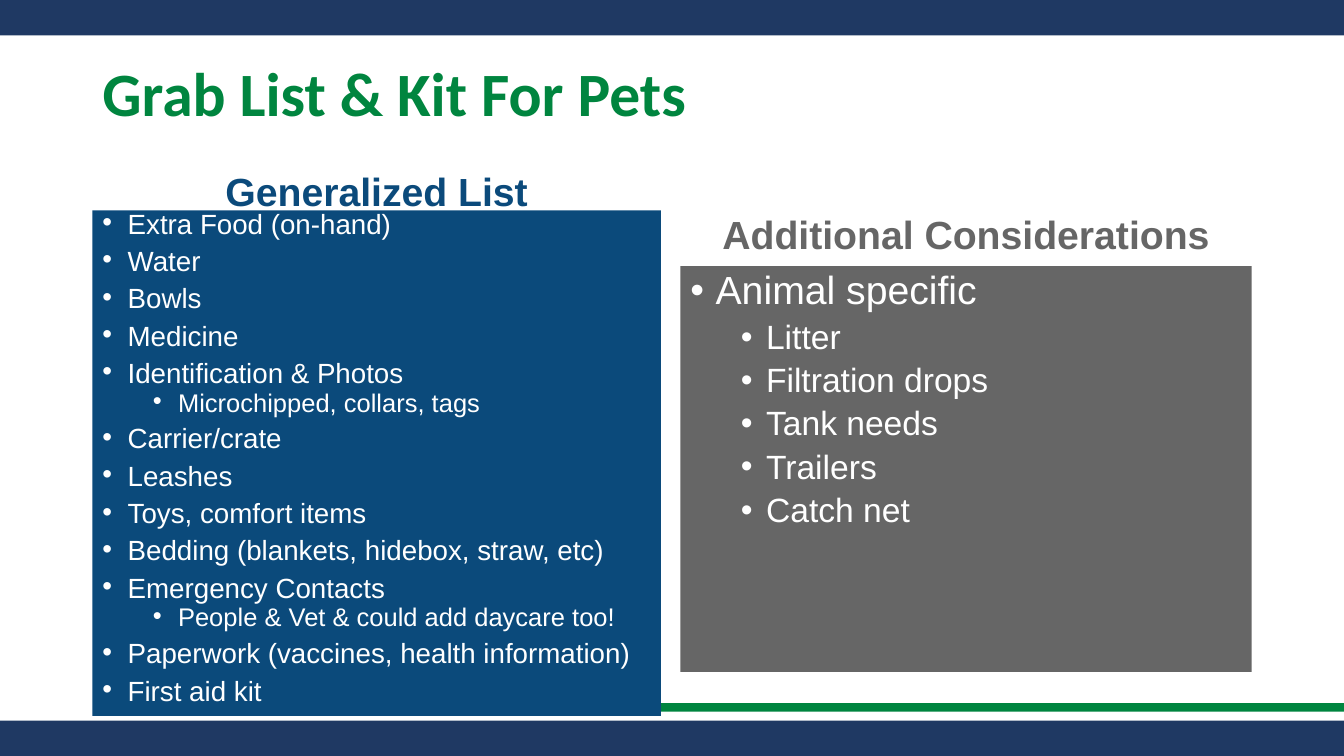
from dataclasses import dataclass

from pptx import Presentation
from pptx.dml.color import RGBColor as RGB
from pptx.enum.shapes import MSO_SHAPE as SHAPE
from pptx.enum.text import MSO_ANCHOR as ANCHOR, MSO_AUTO_SIZE as AUTO, PP_ALIGN as ALIGN
from pptx.oxml import parse_xml
from pptx.oxml.ns import nsdecls
from pptx.util import Pt


@dataclass(frozen=True)
class Theme:
    navy: str = "1F3963"
    green: str = "00853F"
    blue: str = "0B4A7B"
    gray: str = "666666"
    white: str = "FFFFFF"
    title_font: str = "Calibri"
    body_font: str = "Arial"
    title_size: float = 44
    heading_size: float = 28
    compact_sizes: tuple = (19.8, 18.2)
    roomy_sizes: tuple = (28, 24)


def write(tf, text, *, size, color, font, bold=False, align=ALIGN.LEFT,
          spacing=0.9, before=0, level=0, bullet=False):
    p = tf.paragraphs[0]
    if p.runs:
        p = tf.add_paragraph()
    p.level = level
    p.alignment = align
    p.line_spacing = spacing
    p.space_before = Pt(before)
    if bullet:
        pPr = p._p.get_or_add_pPr()
        pPr.set("marL", str(Pt(18 + 36 * level)))
        pPr.set("indent", str(Pt(-18)))
        pPr.append(parse_xml(f'<a:buFont {nsdecls("a")} typeface="Arial"/>'))
        pPr.append(parse_xml(f'<a:buChar {nsdecls("a")} char="•"/>'))
    r = p.add_run()
    r.text = text
    r.font.size = Pt(size)
    r.font.name = font
    r.font.bold = bold
    r.font.color.rgb = RGB.from_string(color)


class Deck:
    def __init__(self, theme):
        self.theme = theme
        self.prs = Presentation()
        self.prs.slide_width, self.prs.slide_height = Pt(960), Pt(540)
        self.s = self.prs.slides.add_slide(self.prs.slide_layouts.get_by_name("Comparison"))
        self.holders = {ph.placeholder_format.idx: ph for ph in self.s.placeholders}

    def place(self, idx, x, y, w, h, anchor=ANCHOR.TOP):
        sp = self.holders[idx]
        sp.left, sp.top, sp.width, sp.height = Pt(x), Pt(y), Pt(w), Pt(h)
        tf = sp.text_frame
        tf.word_wrap = True
        tf.auto_size = AUTO.NONE
        tf.vertical_anchor = anchor
        return sp

    def bars(self, *bars):
        for depth, (x, y, w, h, color) in enumerate(bars, start=2):
            sp = self.s.shapes.add_shape(SHAPE.RECTANGLE, Pt(x), Pt(y), Pt(w), Pt(h))
            sp.shadow.inherit = False
            sp.fill.solid()
            sp.fill.fore_color.rgb = RGB.from_string(color)
            sp.line.fill.background()
            self.s.shapes.element.insert(depth, sp.element)

    def title(self, text):
        t = self.theme
        sp = self.place(0, 66, 29, 828, 80, ANCHOR.MIDDLE)
        write(sp.text_frame, text, size=t.title_size, color=t.green, font=t.title_font, bold=True)

    def heading(self, idx, text, x, y, w, color):
        t = self.theme
        sp = self.place(idx, x, y, w, 39.5)
        write(sp.text_frame, text, size=t.heading_size, color=color, font=t.body_font,
              bold=True, align=ALIGN.CENTER)

    def bullets(self, idx, items, x, y, w, h, color, sizes, spacing):
        t = self.theme
        sp = self.place(idx, x, y, w, h)
        sp.fill.solid()
        sp.fill.fore_color.rgb = RGB.from_string(color)
        for i, (level, text) in enumerate(items):
            write(sp.text_frame, text, size=sizes[level], color=t.white, font=t.body_font,
                  spacing=spacing, before=(10, 5)[level] if i else 0, level=level, bullet=True)


GENERAL = [
    (0, "Extra Food (on-hand)"),
    (0, "Water"),
    (0, "Bowls"),
    (0, "Medicine"),
    (0, "Identification & Photos"),
    (1, "Microchipped, collars, tags"),
    (0, "Carrier/crate"),
    (0, "Leashes"),
    (0, "Toys, comfort items"),
    (0, "Bedding (blankets, hidebox, straw, etc)"),
    (0, "Emergency Contacts"),
    (1, "People & Vet & could add daycare too!"),
    (0, "Paperwork (vaccines, health information)"),
    (0, "First aid kit"),
]
ADDITIONAL = [
    (0, "Animal specific"),
    (1, "Litter"),
    (1, "Filtration drops"),
    (1, "Tank needs"),
    (1, "Trailers"),
    (1, "Catch net"),
]


def main():
    """Build the pet grab list slide and save it."""
    t = Theme()
    deck = Deck(t)
    deck.bars((0, 0, 960, 25.3, t.navy), (126, 502.3, 834, 6, t.green),
              (0, 514.8, 960, 25.2, t.navy))
    deck.title("Grab List & Kit For Pets")
    deck.heading(1, "Generalized List", 66, 119.5, 406, t.blue)
    deck.bullets(2, GENERAL, 66, 150.3, 406, 361, t.blue, t.compact_sizes, 0.7)
    deck.heading(3, "Additional Considerations", 486, 150.5, 408, t.gray)
    deck.bullets(4, ADDITIONAL, 486, 190, 408, 290, t.gray, t.roomy_sizes, 0.9)
    deck.prs.save("out.pptx")


if __name__ == "__main__":
    main()
